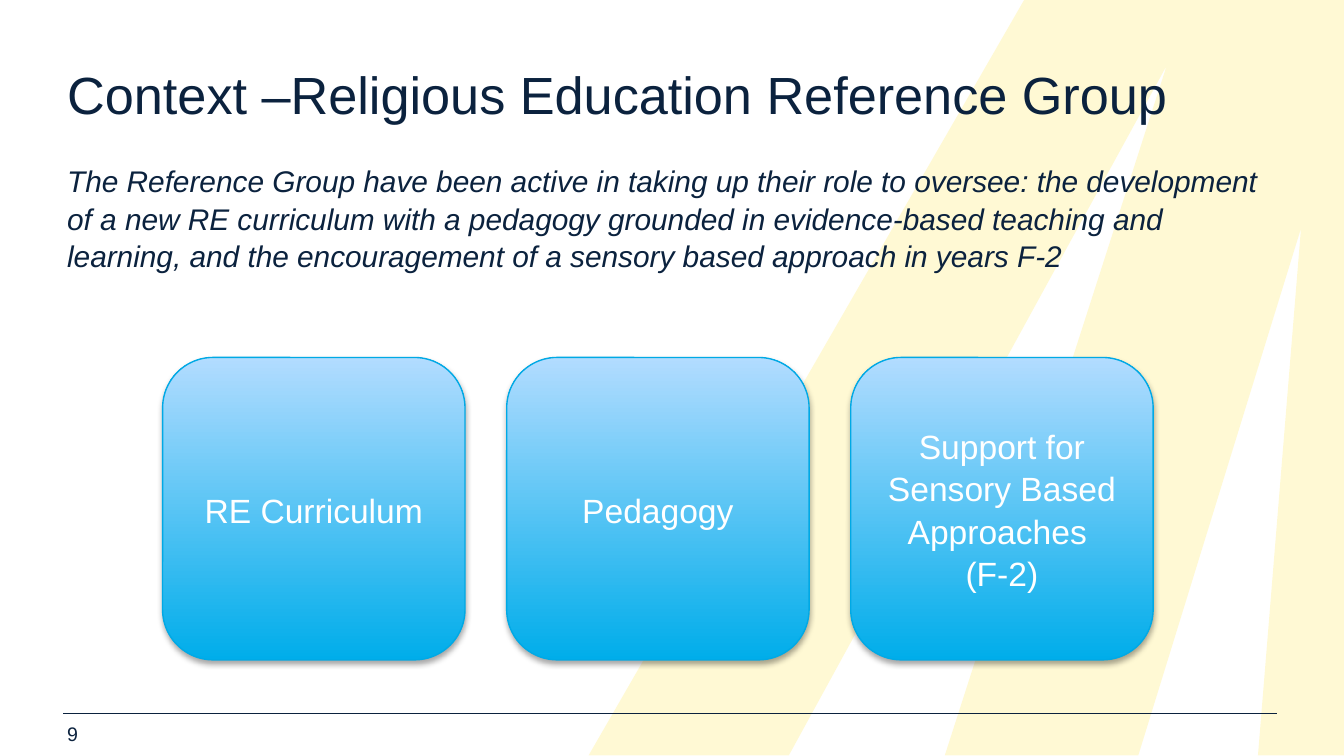
import pptx
import pptx.util
import pptx.dml.color
import pptx.enum.shapes
import pptx.enum.text
import pptx.oxml
import pptx.oxml.ns
from lxml import etree

NAVY = "0B223E"
MARGIN, CONTENT_W = 0.5, 9
CARD_LEFT, CARD_TOP, CARD_SIZE, CARD_STEP = 1.21, 2.66, 2.25, 2.56
CARDS = ["RE Curriculum", "Pedagogy", "Support for Sensory Based Approaches \v(F-2)"]
INTRO = (
    "The Reference Group have been active in taking up their role to oversee: "
    "the development of a new RE curriculum with a pedagogy grounded in "
    "evidence-based teaching and learning, and the encouragement of a sensory "
    "based approach in years F-2"
)
RAYS = [
    [(1000, 0), (762, 0), (438, 562), (587, 562), (868, 49), (1000, 49)],
    [(1000, 49), (868, 49), (703, 562), (847, 562), (968, 170), (1000, 170)],
    [(1000, 170), (968, 170), (936, 562), (1000, 562)],
]
SHADOW = (
    '<a:effectLst %s><a:outerShdw blurRad="39370" dist="22860" dir="5400000" '
    'rotWithShape="0"><a:srgbClr val="000000"><a:alpha val="35000"/></a:srgbClr>'
    "</a:outerShdw></a:effectLst>" % pptx.oxml.ns.nsdecls("a")
)


def color(value):
    """Turn a hex string into an RGB colour."""
    return pptx.dml.color.RGBColor.from_string(value)


def inches(*values):
    """Turn numbers into lengths in inches."""
    return [pptx.util.Inches(v) for v in values]


def write(tf, text, size, fill=NAVY, italic=False, align="LEFT"):
    """Write one paragraph, with a line break at each vertical tab."""
    tf.word_wrap = True
    p = tf.paragraphs[0]
    p.alignment = getattr(pptx.enum.text.PP_ALIGN, align)
    p.line_spacing = 1.05
    for i, part in enumerate(text.split("\v")):
        if i:
            p.add_line_break()
        r = p.add_run()
        r.text = part
        r.font.name = "Arial"
        r.font.size = pptx.util.Pt(size)
        r.font.italic = italic
        r.font.color.rgb = color(fill)


def clear_frame(tf):
    """Remove the insets and start the text at the top."""
    tf.margin_left = tf.margin_right = tf.margin_top = tf.margin_bottom = 0
    tf.vertical_anchor = pptx.enum.text.MSO_ANCHOR.TOP
    tf.auto_size = pptx.enum.text.MSO_AUTO_SIZE.NONE


def add_text(s, box, text, size, italic=False):
    """Add a text box without insets."""
    tf = s.shapes.add_textbox(*inches(*box)).text_frame
    clear_frame(tf)
    write(tf, text, size, italic=italic)


def add_rays(s):
    """Add the pale yellow rays as one outline of three contours."""
    fb = s.shapes.build_freeform(*RAYS[0][0], scale=9144)
    for i, ray in enumerate(RAYS):
        if i:
            fb.move_to(*ray[0])
        fb.add_line_segments(ray[1:], close=True)
    sp = fb.convert_to_shape()
    sp.shadow.inherit = False
    sp.line.fill.background()
    sp.fill.solid()
    sp.fill.fore_color.rgb = color("FFDF00")
    rgb = sp.element.find(".//" + pptx.oxml.ns.qn("a:srgbClr"))
    etree.SubElement(rgb, pptx.oxml.ns.qn("a:alpha"), val="17000")


def add_rule(s):
    """Add the thin line above the page number."""
    line = s.shapes.add_connector(
        pptx.enum.shapes.MSO_CONNECTOR.STRAIGHT, *inches(0.47, 5.31, 9.5, 5.31)
    )
    line.line.color.rgb = color(NAVY)
    line.line.width = pptx.util.Pt(0.5)
    etree.SubElement(line.element.spPr, pptx.oxml.ns.qn("a:effectLst"))


def add_title(s, text):
    """Place the title in front of the rays."""
    title = s.shapes.title
    title.left, title.top, title.width, title.height = inches(
        MARGIN, 0.44, CONTENT_W, 0.42
    )
    s.shapes.element.append(title.element)
    clear_frame(title.text_frame)
    write(title.text_frame, text, 28)


def add_card(s, column, text):
    """Add a shaded rounded card in the given column."""
    sp = s.shapes.add_shape(
        pptx.enum.shapes.MSO_SHAPE.ROUNDED_RECTANGLE,
        *inches(CARD_LEFT + column * CARD_STEP, CARD_TOP, CARD_SIZE, CARD_SIZE)
    )
    sp.fill.gradient()
    sp.fill.gradient_angle = 90
    for stop, value in zip(sp.fill.gradient_stops, ("00ADEA", "B2DCFF")):
        stop.color.rgb = color(value)
    sp.line.color.rgb = color("00A9E5")
    sp.line.width = pptx.util.Pt(0.75)
    sp.element.spPr.append(pptx.oxml.parse_xml(SHADOW))
    sp.text_frame.vertical_anchor = pptx.enum.text.MSO_ANCHOR.MIDDLE
    write(sp.text_frame, text, 18, "FFFFFF", align="CENTER")


def main():
    """Build the slide and save it."""
    prs = pptx.Presentation()
    prs.slide_width, prs.slide_height = inches(10, 10 * 9 / 16)
    s = prs.slides.add_slide(prs.slide_layouts[5])
    add_rays(s)
    add_rule(s)
    add_text(s, (MARGIN, 5.36, 2.3, 0.22), "9", 10.5)
    add_title(s, "Context –Religious Education Reference Group")
    add_text(s, (MARGIN, 1.2, CONTENT_W, 3.43), INTRO, 16, italic=True)
    for column, text in enumerate(CARDS):
        add_card(s, column, text)
    prs.save("out.pptx")


if __name__ == "__main__":
    main()
